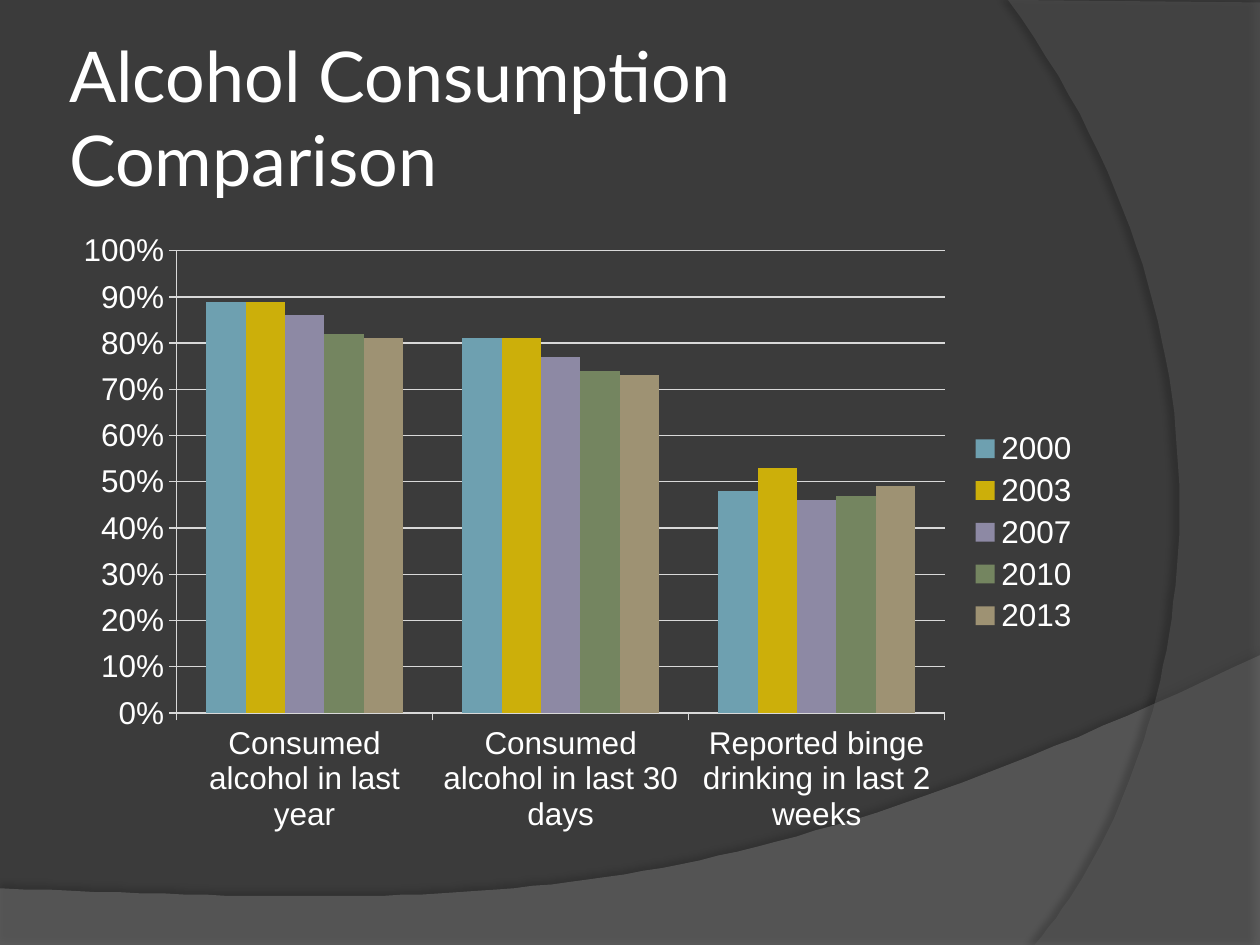
from dataclasses import dataclass

from lxml import etree
from pptx import Presentation
from pptx.chart.data import CategoryChartData
from pptx.dml.color import RGBColor
from pptx.enum.chart import XL_CHART_TYPE, XL_LEGEND_POSITION, XL_TICK_MARK
from pptx.enum.text import MSO_ANCHOR, PP_ALIGN
from pptx.oxml.ns import qn
from pptx.util import Emu, Pt

COLUMNS = XL_CHART_TYPE.COLUMN_CLUSTERED
LEGEND_RIGHT = XL_LEGEND_POSITION.RIGHT
TICK_OUTSIDE = XL_TICK_MARK.OUTSIDE
MIDDLE = MSO_ANCHOR.MIDDLE
LEFT = PP_ALIGN.LEFT

EMU_PER_PX = 9144  # 100 px to the inch
TITLE_ONLY_LAYOUT = 5
CURVE_STEPS = 60

Point = tuple[int, int]


@dataclass(frozen=True)
class Theme:
    background: str = "3B3B3B"
    text: str = "FFFFFF"
    grid: str = "D9D9D9"
    shadow: str = "000000"
    title_font: str = "Lato"
    chart_font: str = "Arial"
    title_size: int = 40
    chart_size: int = 18


@dataclass(frozen=True)
class Band:
    """A background band: straight edges, then one cubic curve."""
    edges: tuple[Point, ...]
    curve: tuple[Point, Point, Point]
    color: str
    opacity: int
    shadow_opacity: int
    shadow_distance: float
    shadow_angle: int


@dataclass(frozen=True)
class Series:
    year: str
    values: tuple[float, ...]
    color: str


THEME = Theme()
BANDS = (
    Band(((0, 705), (0, 751), (1000, 751), (1000, 520)),
         ((559, 729), (391, 719), (0, 705)), "7F7F7F", 45, 35, 3.5, 270),
    Band(((1000, 2), (1000, 750), (821, 750)),
         ((935, 619), (1018, 300), (800, 0)), "5E5E5E", 40, 45, 4, 180),
)
CATEGORIES = (
    "Consumed alcohol in last year",
    "Consumed alcohol in last 30 days",
    "Reported binge drinking in last 2 weeks",
)
SERIES = (
    Series("2000", (0.89, 0.81, 0.48), "6EA0B0"),
    Series("2003", (0.89, 0.81, 0.53), "CCAF0A"),
    Series("2007", (0.86, 0.77, 0.46), "8D89A4"),
    Series("2010", (0.82, 0.74, 0.47), "748560"),
    Series("2013", (0.81, 0.73, 0.49), "9E9273"),
)


def px(length: int) -> Emu:
    return Emu(length * EMU_PER_PX)


def rgb(color: str) -> RGBColor:
    return RGBColor.from_string(color)


def add_alpha(color_element, percent: int) -> None:
    alpha = etree.SubElement(color_element, qn("a:alpha"))
    alpha.set("val", str(percent * 1000))


def curve_points(start: Point, curve: tuple[Point, Point, Point]) -> list[tuple[float, float]]:
    points = []
    for step in range(1, CURVE_STEPS + 1):
        t = step / CURVE_STEPS
        weights = ((1 - t) ** 3, 3 * t * (1 - t) ** 2, 3 * t ** 2 * (1 - t), t ** 3)
        points.append(tuple(
            sum(weight * value for weight, value in zip(weights, values))
            for values in zip(start, *curve)))
    return points


def draw_band(slide, band: Band) -> None:
    builder = slide.shapes.build_freeform(*band.edges[0], scale=EMU_PER_PX)
    builder.add_line_segments(band.edges[1:], close=False)
    builder.add_line_segments(curve_points(band.edges[-1], band.curve), close=True)
    shape = builder.convert_to_shape()
    shape.fill.solid()
    shape.fill.fore_color.rgb = rgb(band.color)
    shape.line.fill.background()
    shape.shadow.inherit = False

    properties = shape._element.spPr
    add_alpha(properties.find(qn("a:solidFill")).find(qn("a:srgbClr")), band.opacity)
    shadow = etree.SubElement(properties.find(qn("a:effectLst")), qn("a:outerShdw"))
    shadow.set("blurRad", str(Pt(4)))
    shadow.set("dist", str(Pt(band.shadow_distance)))
    shadow.set("dir", str(band.shadow_angle * 60000))
    shadow.set("rotWithShape", "0")
    shadow_color = etree.SubElement(shadow, qn("a:srgbClr"))
    shadow_color.set("val", THEME.shadow)
    add_alpha(shadow_color, band.shadow_opacity)


def draw_title(slide, text: str) -> None:
    title = slide.shapes.title
    title.left, title.top, title.width, title.height = px(50), px(30), px(817), px(125)
    frame = title.text_frame
    frame.text = text
    frame.word_wrap = True
    frame.vertical_anchor = MIDDLE
    frame.margin_left = frame.margin_right = px(5)
    frame.margin_top = frame.margin_bottom = px(5)
    paragraph = frame.paragraphs[0]
    paragraph.alignment = LEFT
    paragraph.font.name = THEME.title_font
    paragraph.font.size = Pt(THEME.title_size)
    paragraph.font.color.rgb = rgb(THEME.text)
    # Bring the title in front of the bands
    slide.shapes._spTree.append(title._element)


def draw_chart(slide) -> None:
    data = CategoryChartData(number_format="0%")
    data.categories = CATEGORIES
    for series in SERIES:
        data.add_series(series.year, series.values)
    chart = slide.shapes.add_chart(
        COLUMNS, px(50), px(175), px(817), px(495), data).chart
    chart.has_title = False
    chart.font.name = THEME.chart_font
    chart.font.size = Pt(THEME.chart_size)
    chart.font.color.rgb = rgb(THEME.text)

    # Columns
    plot = chart.plots[0]
    plot.gap_width = 150
    plot.overlap = 0
    plot.vary_by_categories = False
    for drawn, series in zip(plot.series, SERIES):
        drawn.format.fill.solid()
        drawn.format.fill.fore_color.rgb = rgb(series.color)

    # Axes
    value_axis = chart.value_axis
    value_axis.minimum_scale, value_axis.maximum_scale = 0, 1
    value_axis.major_unit = 0.1
    value_axis.tick_labels.number_format = "0%"
    value_axis.tick_labels.number_format_is_linked = False
    value_axis.has_major_gridlines = True
    for axis in (value_axis, chart.category_axis):
        axis.major_tick_mark = TICK_OUTSIDE
    for lines in (value_axis, chart.category_axis, value_axis.major_gridlines):
        lines.format.line.color.rgb = rgb(THEME.grid)
        lines.format.line.width = Pt(0.75)

    # Legend
    chart.has_legend = True
    chart.legend.position = LEGEND_RIGHT
    chart.legend.include_in_layout = False


def main() -> None:
    presentation = Presentation()
    presentation.slide_width, presentation.slide_height = px(1000), px(750)
    slide = presentation.slides.add_slide(presentation.slide_layouts[TITLE_ONLY_LAYOUT])
    slide.background.fill.solid()
    slide.background.fill.fore_color.rgb = rgb(THEME.background)

    for band in BANDS:
        draw_band(slide, band)
    draw_title(slide, "Alcohol Consumption Comparison")
    draw_chart(slide)
    presentation.save("out.pptx")


if __name__ == "__main__":
    main()
